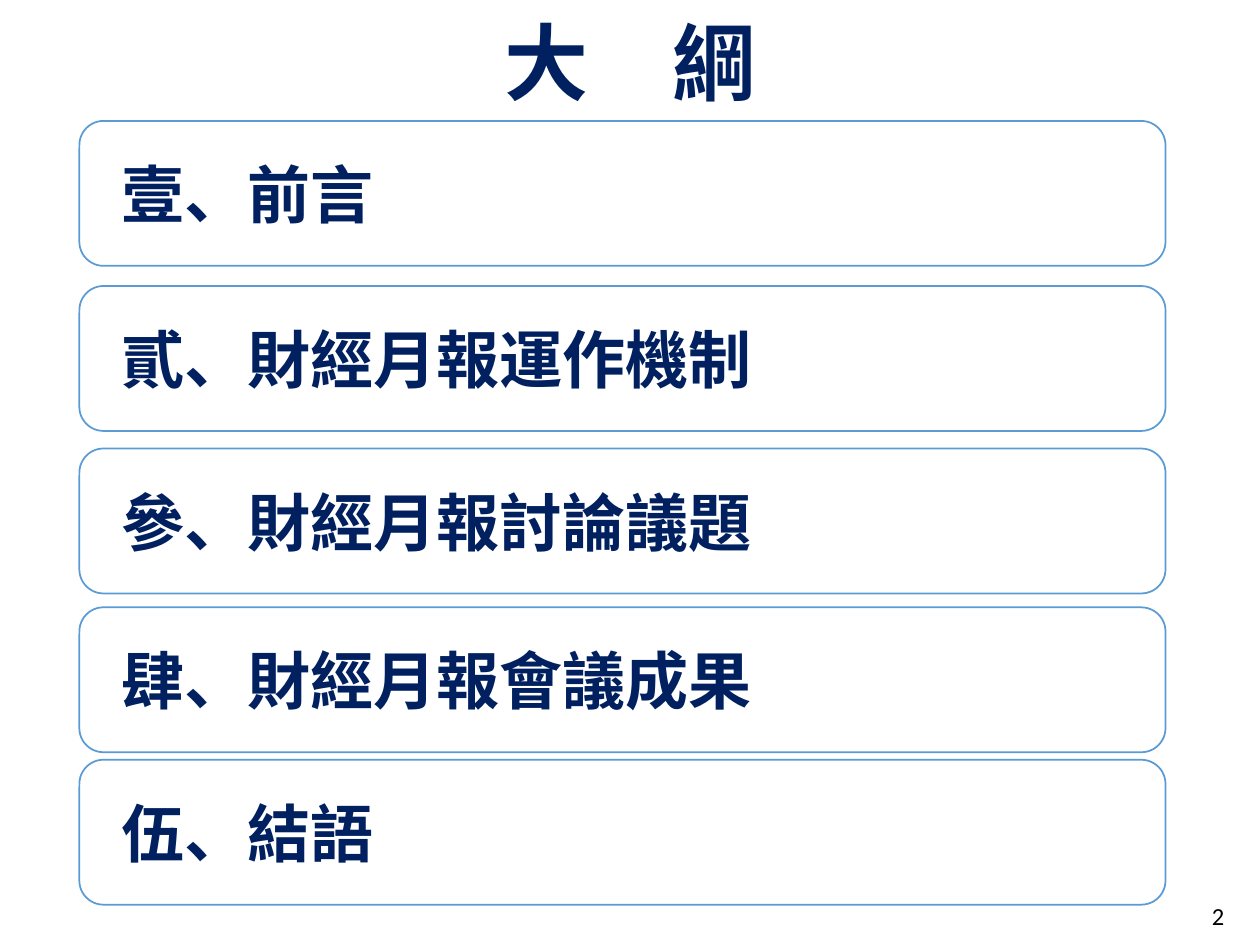
import pptx
import pptx.dml.color
import pptx.enum.shapes
import pptx.enum.text
import pptx.util

Inches = pptx.util.Inches
NAVY = "002060"
HEADINGS = {
    0.96: "壹、前言",
    2.27: "貳、財經月報運作機制",
    3.56: "參、財經月報討論議題",
    4.82: "肆、財經月報會議成果",
    6.03: "伍、結語",
}


def color(value):
    return pptx.dml.color.RGBColor.from_string(value)


def write(box, text, size, font, ink, bold=False, margin=0, indent=0):
    frame = box.text_frame
    frame.word_wrap = True
    frame.auto_size = pptx.enum.text.MSO_AUTO_SIZE.NONE
    para = frame.paragraphs[0]
    para.text = text
    properties = para._p.get_or_add_pPr()
    properties.set("marL", str(Inches(margin)))
    properties.set("indent", str(Inches(indent)))
    para.font.size = pptx.util.Pt(size)
    para.font.name = font
    para.font.bold = bold
    para.font.color.rgb = color(ink)
    return para


def add_title(page, text):
    title = page.shapes.title
    title.left, title.top = Inches(0.5), Inches(-0.19)
    title.width, title.height = Inches(8.62), Inches(1.45)
    para = write(title, text, 48, "Times New Roman", NAVY, True, 0.39)
    para.alignment = pptx.enum.text.PP_ALIGN.CENTER
    para.line_spacing = 0.9
    title.text_frame.vertical_anchor = pptx.enum.text.MSO_ANCHOR.MIDDLE


def add_heading(page, top, text):
    box = page.shapes.add_shape(
        pptx.enum.shapes.MSO_SHAPE.ROUNDED_RECTANGLE,
        Inches(0.63), Inches(top), Inches(8.62), Inches(1.15))
    box.shadow.inherit = False
    box.fill.solid()
    box.fill.fore_color.rgb = color("FFFFFF")
    box.line.color.rgb = color("5B9BD5")
    box.line.width = pptx.util.Pt(1)
    frame = box.text_frame
    frame.margin_left, frame.margin_right = Inches(0.08), 0
    frame.margin_top = frame.margin_bottom = Inches(0.05)
    frame.vertical_anchor = pptx.enum.text.MSO_ANCHOR.MIDDLE
    para = write(box, text, 36, "Times New Roman", NAVY, True, 0.59, -0.39)
    para.alignment = pptx.enum.text.PP_ALIGN.LEFT


def add_page_number(page, number):
    box = page.shapes.add_textbox(
        Inches(9.52), Inches(7.1), Inches(0.57), Inches(0.4))
    write(box, number, 14, "Calibri", "000000")


def main():
    deck = pptx.Presentation()
    deck.slide_width, deck.slide_height = Inches(10), Inches(7.5)
    page = deck.slides.add_slide(deck.slide_layouts[5])
    add_title(page, "大　綱")
    for top, text in HEADINGS.items():
        add_heading(page, top, text)
    add_page_number(page, "2")
    deck.save("out.pptx")


if __name__ == "__main__":
    main()
